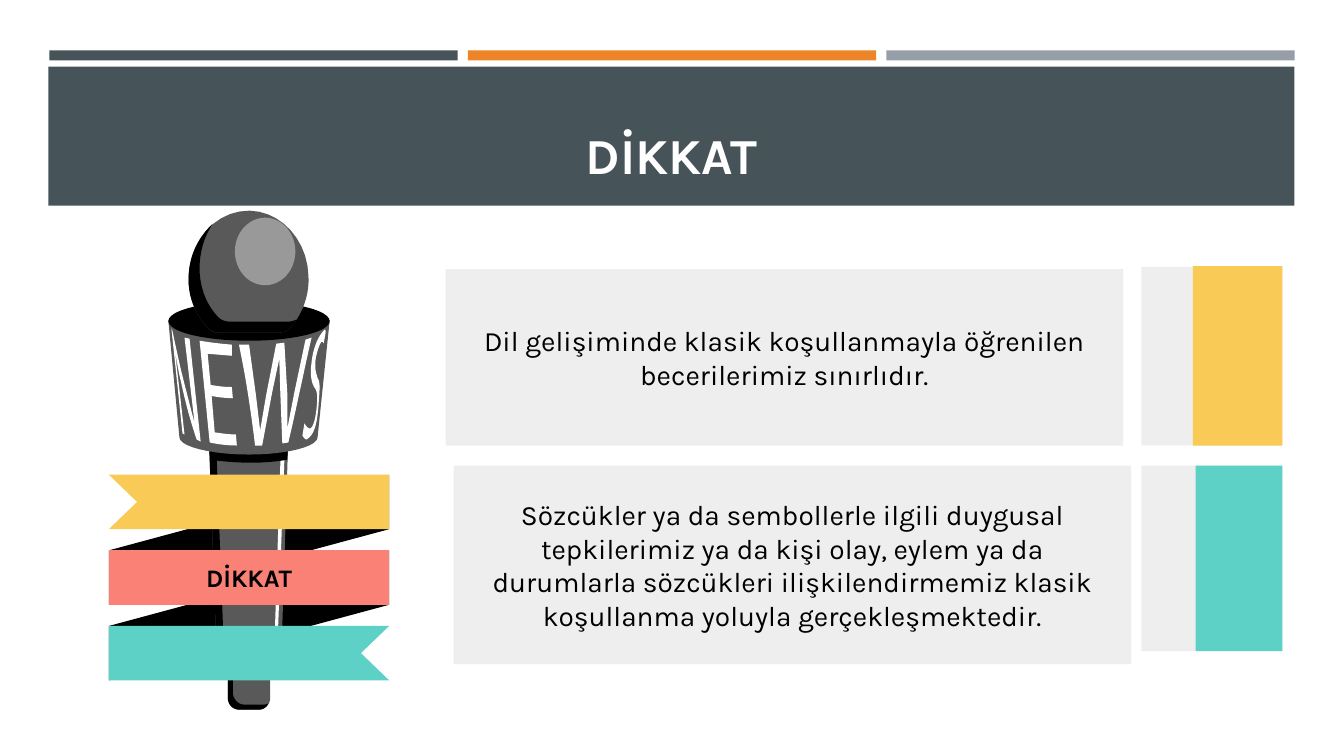
from pptx import Presentation, util as u
from pptx.dml.color import RGBColor
from pptx.enum import shapes, text

PX = 9144  # one px is a hundredth of an inch
FONT = "Karla"
COLORS = {
    "slate": "465359", "orange": "ED8428", "steel": "969FA7", "panel": "EEEEEE",
    "yellow": "F9CA55", "coral": "FA8175", "teal": "5ED1C6", "black": "000000",
    "body": "595959", "shine": "999999", "white": "FFFFFF",
}

# Content
TITLE = ("DİKKAT", 36, True, "white")
LABEL = ("DİKKAT", 18, True, "black")
STRIPES = ["slate", "orange", "steel"]
PANELS = [  # box, text
    ((442, 267, 672, 175), "Dil gelişiminde klasik koşullanmayla öğrenilen becerilerimiz sınırlıdır."),
    ((450, 462, 672, 197), "Sözcükler ya da sembollerle ilgili duygusal tepkilerimiz ya da kişi olay, "
     "eylem ya da durumlarla sözcükleri ilişkilendirmemiz klasik koşullanma yoluyla gerçekleşmektedir."),
]
TABS = [  # top, height, left of the coloured part, top of it, colour
    (265, 177, 1183, 264, "yellow"),
    (462, 184, 1186, 462, "teal"),
]
TAB_LEFT, TAB_RIGHT = 1132, 1272

# Microphone outlines: M and L take a point, C takes two handles and a point
HANDLE = [
    ("body", "M 226 483 L 226 692 C 226 699 231 704 237 704 L 257 704 "
             "C 263 704 268 699 268 692 L 268 483"),
    ("black", "M 226 483 L 226 692 C 226 699 231 704 237 704 L 257 704 C 261 704 264 702 266 698 "
              "C 265 698 264 699 262 699 L 242 699 C 236 699 231 693 231 687 L 231 483"),
    ("body", "M 207 431 L 215 652 C 215 656 229 659 247 659 C 265 659 279 656 279 652 L 286 431"),
    ("white", "M 279 431 L 272 645 L 275 645 L 283 431"),
    ("black", "M 207 431 L 208 456 L 215 652 C 215 656 229 659 247 659 C 264 659 279 656 279 653 "
              "L 279 648 C 273 649 264 650 254 650 C 236 650 222 648 222 644 L 215 457 "
              "C 225 458 235 459 247 459 L 250 459 C 263 459 275 458 285 456 L 286 431"),
]
COLLAR = [
    ("body", "M 167 318 L 178 434 C 178 443 209 451 247 451 C 285 451 315 443 315 434 L 327 318"),
    ("white", "M 170 326 L 181 430 L 183 431 L 178 387 L 173 344 C 175 357 177 369 180 381 "
              "C 184 400 189 418 195 436 L 199 438 L 188 336 L 183 335 L 188 377 L 193 420 "
              "L 184 385 C 179 366 175 347 171 328"),
    ("white", "M 198 338 L 208 439 C 217 441 226 442 235 442 L 234 431 C 225 431 221 430 213 429 "
              "L 210 393 C 217 394 222 395 231 395 L 230 384 C 221 384 216 383 209 382 L 206 351 "
              "L 230 353 L 230 342 C 219 341 209 340 198 338"),
    ("white", "M 309 335 L 303 337 L 292 389 L 285 425 L 285 391 L 282 340 L 274 341 L 264 392 "
              "L 258 427 L 254 393 L 247 342 L 237 342 C 244 375 249 409 253 442 L 260 442 "
              "L 270 389 L 277 356 L 278 389 L 280 440 L 286 439 C 294 405 301 370 309 335"),
    ("white", "M 322 327 C 314 335 310 349 309 360 C 307 375 310 382 313 386 C 315 390 315 395 314 405 "
              "C 313 415 311 423 308 425 C 305 425 304 423 302 420 L 300 432 C 301 434 303 436 304 436 "
              "C 314 431 315 412 316 402 C 317 387 318 379 315 375 C 314 371 312 367 313 357 "
              "C 314 350 317 341 319 339 C 320 339 321 340 321 341 L 323 330 C 323 328 323 327 322 327"),
]
HEAD = [
    ("body", "M 247 209 C 214 209 187 239 187 277 C 187 295 194 312 205 324 C 208 328 212 330 217 330 "
             "L 276 330 C 281 330 286 328 289 324 C 300 311 307 293 306 274 C 305 238 279 210 248 209"),
    ("black", "M 211 222 C 197 235 187 254 187 277 C 187 295 194 312 205 324 C 208 328 213 330 217 330 "
              "L 276 330 C 281 330 286 328 289 324 C 291 322 293 319 294 317 C 292 318 289 319 287 319 "
              "L 227 319 C 223 319 218 317 215 313 C 204 301 198 284 198 266 C 198 249 203 234 211 222"),
]
COLLAR_TOP = ("black", (167, 299, 160, 39))
HIGHLIGHT = ("shine", (233, 216, 60, 67))

# Ribbon: bands with a notch at the left, none, or at the right
LEFT, RIGHT, TOP, BAND, STEP, NOTCH = 108, 386, 471, 54, 75, 28
BANDS = [("yellow", "left"), ("coral", None), ("teal", "right")]

prs = Presentation()
prs.slide_width, prs.slide_height = u.Inches(13.33), u.Inches(7.5)
s = prs.slides.add_slide(prs.slide_layouts[6])


def paint(sp, color):
    sp.shadow.inherit = False
    sp.fill.solid()
    sp.fill.fore_color.rgb = RGBColor.from_string(COLORS[color])
    sp.line.fill.background()
    return sp


def preset(parent, color, box, kind=shapes.MSO_SHAPE.RECTANGLE):
    return paint(parent.shapes.add_shape(kind, *(v * PX for v in box)), color)


def write(sp, content, anchor=text.MSO_ANCHOR.MIDDLE, side=10, edge=10):
    words, size, bold, color = content
    tf = sp.text_frame
    frame = {"word_wrap": True, "vertical_anchor": anchor, "margin_left": side * PX,
             "margin_right": side * PX, "margin_top": edge * PX, "margin_bottom": edge * PX}
    for name, value in frame.items():
        setattr(tf, name, value)
    p = tf.paragraphs[0]
    p.alignment = text.PP_ALIGN.CENTER
    r = p.add_run()
    r.text = words
    for name, value in {"name": FONT, "size": u.Pt(size), "bold": bold}.items():
        setattr(r.font, name, value)
    r.font.color.rgb = RGBColor.from_string(COLORS[color])


def polygon(parent, color, points):
    points = [(round(x * PX), round(y * PX)) for x, y in points]
    builder = parent.shapes.build_freeform(*points[0])
    builder.add_line_segments(points[1:], close=True)
    return paint(builder.convert_to_shape(), color)


def trace(outline, steps=10):
    """Turn an outline into points, cutting each curve into short lines."""
    tokens, points = iter(outline.split()), []
    for command in tokens:
        count = 3 if command == "C" else 1
        ends = [(int(next(tokens)), int(next(tokens))) for _ in range(count)]
        if command != "C":
            points += ends
            continue
        curve = [points[-1]] + ends
        for i in range(1, steps + 1):
            t = i / steps
            weights = ((1 - t) ** 3, 3 * t * (1 - t) ** 2, 3 * t * t * (1 - t), t ** 3)
            points.append(tuple(sum(w * c[axis] for w, c in zip(weights, curve)) for axis in (0, 1)))
    return points


# Header
for i, color in enumerate(STRIPES):
    preset(s, color, (49 + 415 * i, 50, 405, 10))
preset(s, "slate", (48, 66, 1236, 138))
title = s.shapes.add_textbox(*(v * PX for v in (63, 80, 1206, 108)))
write(title, TITLE, text.MSO_ANCHOR.BOTTOM, edge=5)

# Ribbon folds, behind the microphone
mic = s.shapes.add_group_shape()
for i in range(len(BANDS) - 1):
    y = TOP + STEP * i
    polygon(mic, "black", [(RIGHT, y), (LEFT, y + STEP), (LEFT, y + STEP + BAND), (RIGHT, y + BAND)])

# Microphone
for color, outline in HANDLE + COLLAR:
    polygon(mic, color, trace(outline))
preset(mic, *COLLAR_TOP, shapes.MSO_SHAPE.OVAL)
for color, outline in HEAD:
    polygon(mic, color, trace(outline))
preset(mic, *HIGHLIGHT, shapes.MSO_SHAPE.OVAL)

# Ribbon bands
for i, (color, notch) in enumerate(BANDS):
    y = TOP + STEP * i
    points = [(LEFT, y), (RIGHT, y), (RIGHT, y + BAND), (LEFT, y + BAND)]
    if notch == "right":
        points.insert(2, (RIGHT - NOTCH, y + BAND / 2))
    elif notch == "left":
        points.append((LEFT + NOTCH, y + BAND / 2))
    band = polygon(mic, color, points)
    if notch is None:
        write(band, LABEL)

# Text panels and coloured tabs
for box, words in PANELS:
    write(preset(s, "panel", box), (words, 20, False, "black"), side=15)
for top, height, left, color_top, color in TABS:
    preset(s, "panel", (TAB_LEFT, top, TAB_RIGHT - TAB_LEFT, height))
    preset(s, color, (left, color_top, TAB_RIGHT - left, top + height - color_top))

prs.save("out.pptx")
